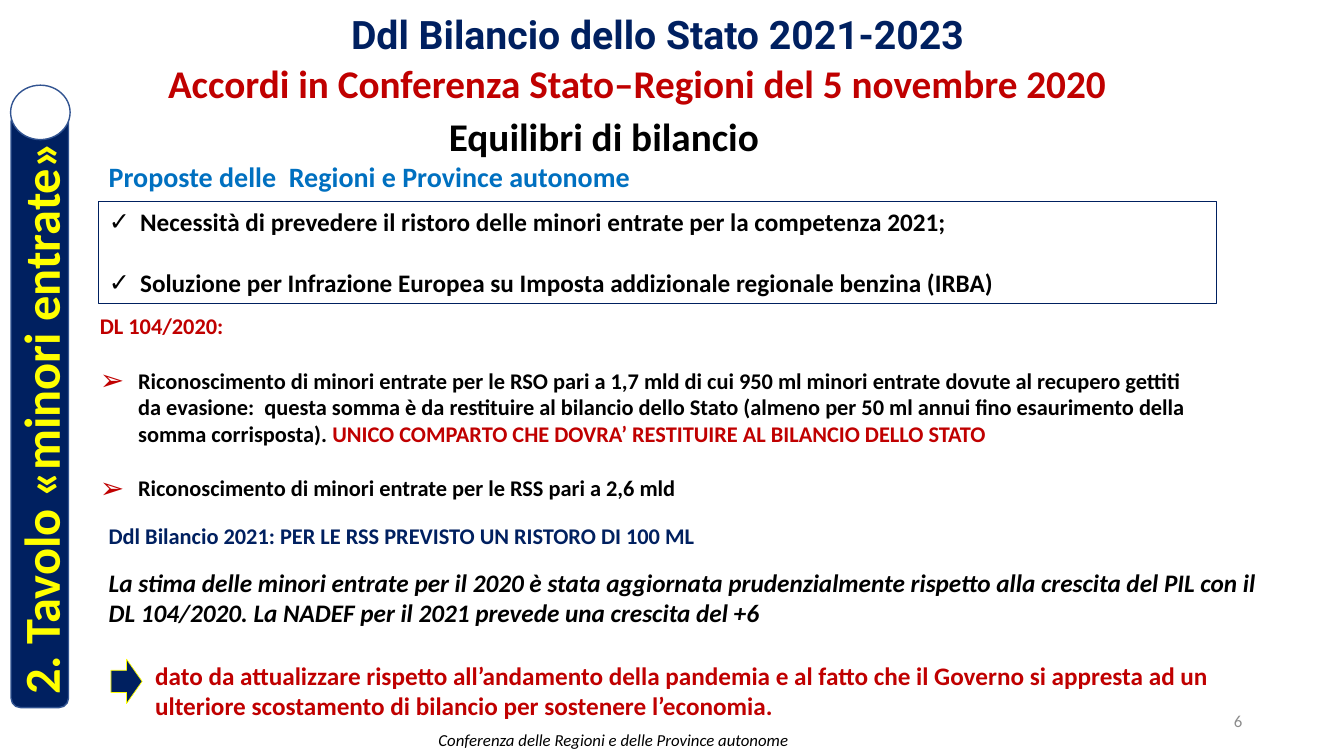
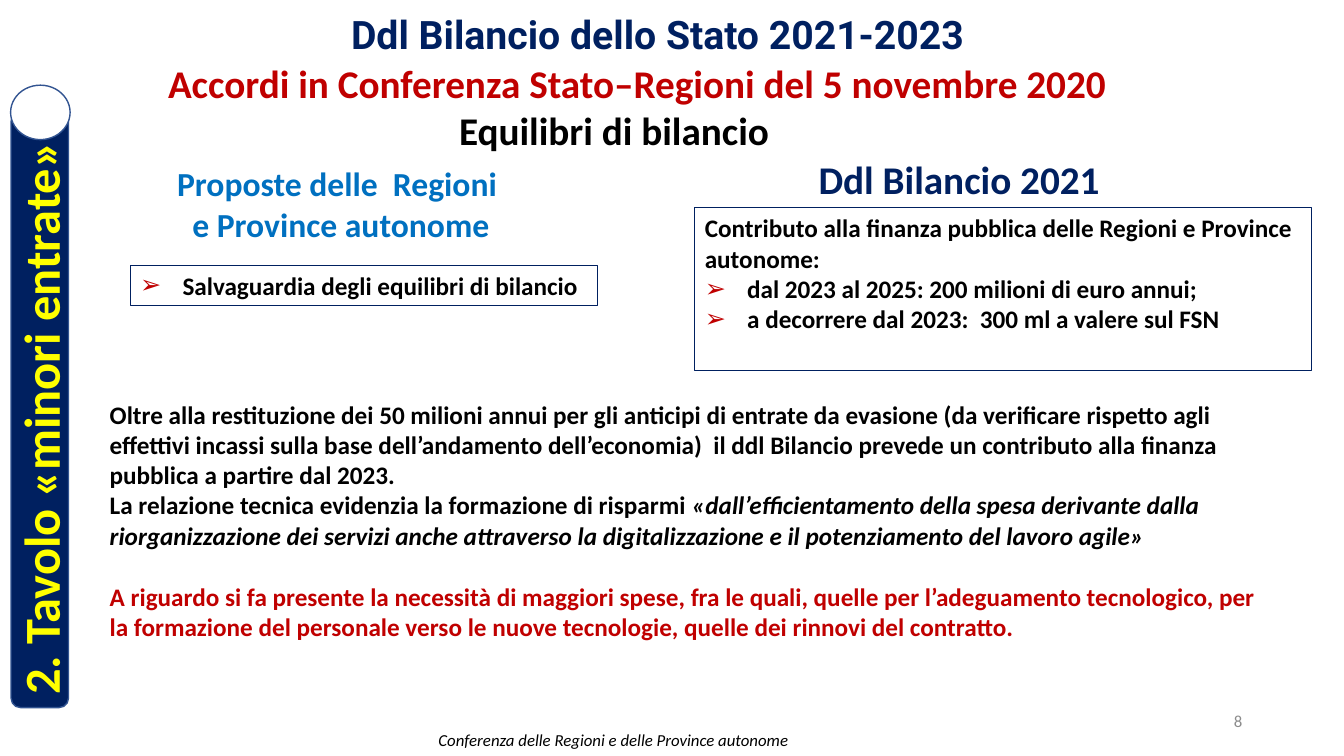
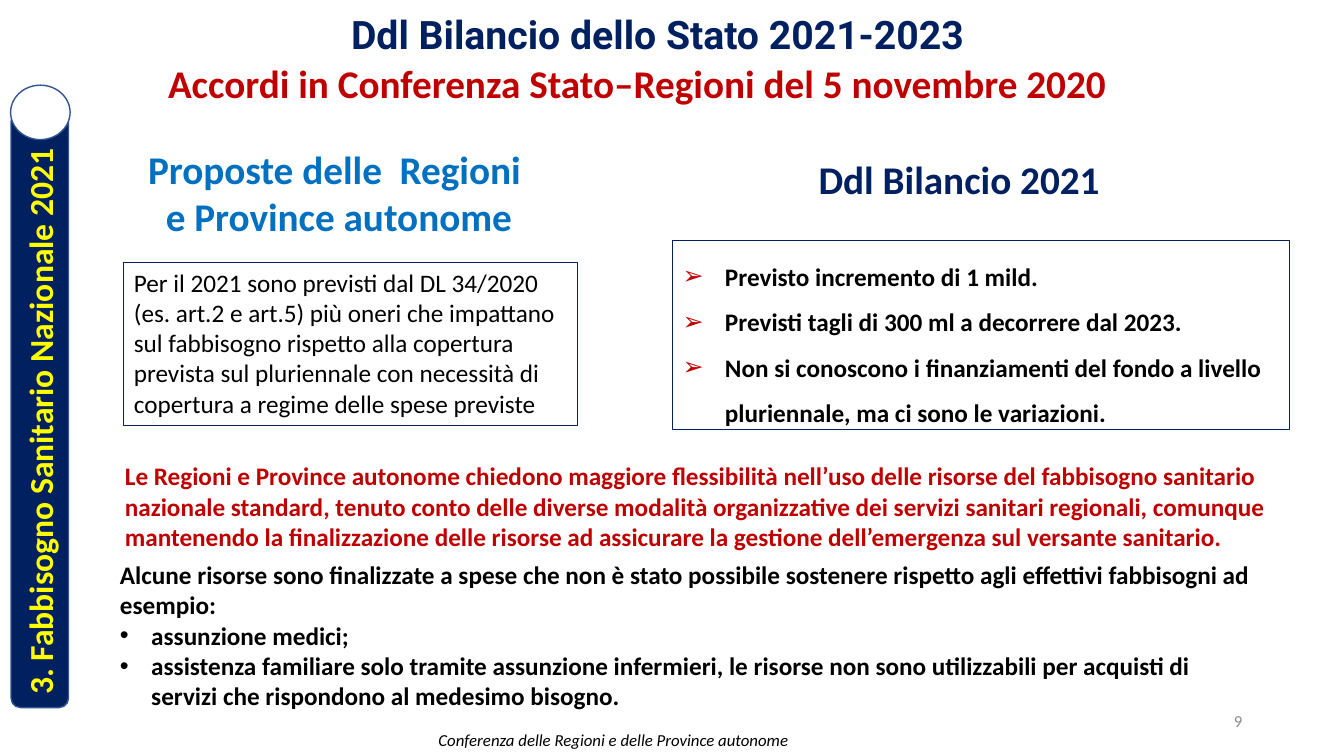
from dataclasses import dataclass

from lxml import etree
from pptx import Presentation
from pptx.dml.color import RGBColor
from pptx.enum.shapes import MSO_SHAPE
from pptx.enum.text import MSO_ANCHOR, MSO_AUTO_SIZE, PP_ALIGN
from pptx.oxml.ns import qn
from pptx.util import Emu, Pt

LEFT, CENTER, RIGHT = PP_ALIGN.LEFT, PP_ALIGN.CENTER, PP_ALIGN.RIGHT
TOP, MIDDLE = MSO_ANCHOR.TOP, MSO_ANCHOR.MIDDLE
NO_FIT = MSO_AUTO_SIZE.NONE
RECTANGLE, ROUNDED = MSO_SHAPE.RECTANGLE, MSO_SHAPE.ROUNDED_RECTANGLE
DISC, ARROW = MSO_SHAPE.FLOWCHART_CONNECTOR, MSO_SHAPE.RIGHT_ARROW

EMU_PER_PX = 9144
SLIDE_SIZE = (1333, 750)
TWO_CONTENT_LAYOUT = 3
LINE_HEIGHT = 1.22
COLORS = {
    "navy": "002060",
    "red": "C00000",
    "blue": "0070C0",
    "black": "000000",
    "white": "FFFFFF",
    "yellow": "FFFF00",
    "outline": "325491",
    "gray": "8C8C8C",
}


@dataclass
class Span:
    """A stretch of text in one style."""

    text: str
    color: str = "black"
    bold: bool = True
    italic: bool = False


@dataclass
class Para:
    """A paragraph; gap counts empty lines before it, indent is in px."""

    spans: list
    bullet: str = ""
    indent: int = 0
    bullet_color: str = ""
    bullet_percent: int = 100
    gap: int = 0
    spacing: float = 1.0


def px(length):
    """Turn px into EMU."""
    return Emu(length * EMU_PER_PX)


def rgb(name):
    """Look up a colour by name."""
    return RGBColor.from_string(COLORS[name])


def plain(text, color="black", **style):
    """Make a paragraph of one span."""
    return Para([Span(text, color, **style)])


def check(text, gap=0):
    """Make a paragraph with a check mark."""
    return Para([Span(text)], "✓", 31, gap=gap)


def dot(text):
    """Make a paragraph with a round bullet."""
    return Para([Span(text)], "•", 31)


def arrow(*spans, indent=42, percent=100, gap=0, spacing=1.0):
    """Make a paragraph with a red arrowhead bullet."""
    return Para(list(spans), "➢", indent, "red", percent, gap, spacing)


def set_bullet(para, item):
    """Write the indent and bullet of a paragraph."""
    properties = para._p.get_or_add_pPr()
    properties.set("marL", str(px(item.indent)))
    properties.set("indent", str(-px(item.indent)))
    if not item.bullet:
        etree.SubElement(properties, qn("a:buNone"))
        return
    if item.bullet_color:
        holder = etree.SubElement(properties, qn("a:buClr"))
        etree.SubElement(holder, qn("a:srgbClr"), val=COLORS[item.bullet_color])
    etree.SubElement(properties, qn("a:buSzPct"), val=str(item.bullet_percent * 1000))
    etree.SubElement(properties, qn("a:buChar"), char=item.bullet)


def write_text(box, items, size, align=LEFT, anchor=TOP, font="Calibri"):
    """Fill a box with paragraphs, run by run."""
    frame = box.text_frame
    frame.word_wrap = True
    frame.auto_size = NO_FIT
    frame.vertical_anchor = anchor
    for index, item in enumerate(items):
        para = frame.add_paragraph() if index else frame.paragraphs[0]
        set_bullet(para, item)
        para.alignment = align
        para.line_spacing = item.spacing
        para.space_before = Pt(round(item.gap * size * LINE_HEIGHT, 1))
        for span in item.spans:
            run = para.add_run()
            run.text = span.text
            run.font.name = font
            run.font.size = Pt(size)
            run.font.bold = span.bold
            run.font.italic = span.italic
            run.font.color.rgb = rgb(span.color)


def place(box, at):
    """Move and size a placeholder."""
    box.left, box.top, box.width, box.height = map(px, at)


def set_line(box, color, width):
    """Outline a shape."""
    box.line.color.rgb = rgb(color)
    box.line.width = Pt(width)


def add_text(page, at, items, size, **layout):
    """Add a text box."""
    box = page.shapes.add_textbox(*map(px, at))
    write_text(box, items, size, **layout)


def add_shape(page, kind, at, fill, line="", width=1.0, rotation=0):
    """Add a filled preset shape."""
    shape = page.shapes.add_shape(kind, *map(px, at))
    shape.shadow.inherit = False
    shape.rotation = rotation
    shape.fill.solid()
    shape.fill.fore_color.rgb = rgb(fill)
    if line:
        set_line(shape, line, width)
    else:
        shape.line.fill.background()
    return shape


def add_framed_text(page, at, items, size):
    """Add a thinly framed box without fill."""
    box = page.shapes.add_textbox(*map(px, at))
    set_line(box, "navy", 0.75)
    write_text(box, items, size)


def fill_list(page, index, at, items, size, framed=True):
    """Put a list in a body placeholder."""
    body = page.placeholders[index]
    place(body, at)
    if framed:
        set_line(body, "navy", 0.75)
    write_text(body, items, size)


def add_page(deck, number, section, section_size):
    """Add a slide with the shared titles, side band, footer and number."""
    page = deck.slides.add_slide(deck.slide_layouts[TWO_CONTENT_LAYOUT])
    footer = add_shape(page, RECTANGLE, (348, 723, 521, 22), "white")
    credit = plain("Conferenza delle Regioni e delle Province autonome", bold=False, italic=True)
    write_text(footer, [credit], 12, align=CENTER, anchor=MIDDLE)
    title = page.shapes.title
    place(title, (202, 5, 900, 52))
    write_text(title, [plain("Ddl Bilancio dello Stato 2021-2023", "navy")], 28,
               align=CENTER, font="Roboto")
    subtitle = plain("Accordi in Conferenza Stato–Regioni del 5 novembre 2020", "red")
    add_text(page, (129, 54, 1005, 57), [subtitle], 28, align=CENTER)
    band = add_shape(page, ROUNDED, (-256, 378, 591, 57), "navy", "outline", rotation=270)
    write_text(band, [plain(section, "yellow")], section_size, anchor=MIDDLE)
    add_shape(page, DISC, (13, 82, 54, 59), "white", "outline", rotation=270)
    add_text(page, (942, 695, 300, 40), [plain(str(number), "gray", bold=False)], 12,
             align=RIGHT, anchor=MIDDLE)
    return page


def add_topic(page, left, top):
    """Add the topic line below the titles."""
    add_text(page, (left, top, 666, 57), [plain("Equilibri di bilancio")], 28, align=CENTER)


def add_column_heads(page, at, size):
    """Add the headings of the proposals and the bill."""
    proposals = [plain("Proposte delle  Regioni ", "blue"), plain("e Province autonome", "blue")]
    add_text(page, at, proposals, size, align=CENTER)
    add_text(page, (802, 149, 415, 57), [plain("Ddl Bilancio 2021", "navy")], 28)


def build_revenue(deck):
    """Build the slide on lower revenue."""
    page = add_page(deck, 6, "2. Tavolo «minori entrate»", 36)
    add_topic(page, 266, 107)
    add_text(page, (98, 153, 610, 44),
             [plain("Proposte delle  Regioni e Province autonome", "blue")], 20)
    fill_list(page, 1, (98, 200, 1109, 101), [
        check("Necessità di prevedere il ristoro delle minori entrate per la competenza 2021;"),
        check("Soluzione per Infrazione Europea su Imposta addizionale regionale benzina (IRBA)",
              gap=1),
    ], 18)
    fill_list(page, 2, (89, 305, 1117, 199), [
        plain("DL 104/2020:", "red"),
        arrow(
            Span("Riconoscimento di minori entrate per le RSO pari a 1,7 mld di cui 950 ml "
                 "minori entrate dovute al recupero gettiti da evasione:  questa somma è da "
                 "restituire al bilancio dello Stato (almeno per 50 ml annui fino esaurimento "
                 "della somma corrisposta). "),
            Span("UNICO COMPARTO CHE DOVRA’ RESTITUIRE AL BILANCIO DELLO STATO", "red"),
            indent=38, percent=130, gap=1),
        arrow(Span("Riconoscimento di minori entrate per le RSS pari a 2,6 mld"),
              indent=38, percent=130, gap=1),
    ], 16, framed=False)
    add_text(page, (98, 513, 1027, 37),
             [plain("Ddl Bilancio 2021: PER LE RSS PREVISTO UN RISTORO DI 100 ML", "navy")], 16)
    add_text(page, (98, 558, 1163, 71), [plain(
        "La stima delle minori entrate per il 2020 è stata aggiornata prudenzialmente rispetto "
        "alla crescita del PIL con il DL 104/2020. La NADEF per il 2021 prevede una crescita "
        "del +6", italic=True)], 18)
    add_text(page, (144, 650, 1136, 71), [plain(
        "dato da attualizzare rispetto all’andamento della pandemia e al fatto che il Governo "
        "si appresta ad un ulteriore scostamento di bilancio per sostenere l’economia.",
        "red")], 18)
    add_shape(page, ARROW, (110, 654, 31, 44), "navy", "yellow", 0.5)


def build_balance(deck):
    """Build the slide on the balanced budget."""
    page = add_page(deck, 8, "2. Tavolo «minori entrate»", 36)
    add_topic(page, 276, 101)
    add_column_heads(page, (32, 157, 612, 91), 24)
    fill_list(page, 1, (129, 263, 464, 40),
              [arrow(Span("Salvaguardia degli equilibri di bilancio"))], 18)
    fill_list(page, 2, (689, 206, 612, 162), [
        plain("Contributo alla finanza pubblica delle Regioni e Province autonome:"),
        arrow(Span("dal 2023 al 2025: 200 milioni di euro annui;")),
        arrow(Span("a decorrere dal 2023:  300 ml a valere sul FSN")),
    ], 18)
    add_text(page, (99, 391, 1174, 252), [
        plain("Oltre alla restituzione dei 50 milioni annui per gli anticipi di entrate da "
              "evasione (da verificare rispetto agli effettivi incassi sulla base "
              "dell’andamento dell’economia)  il ddl Bilancio prevede un contributo alla "
              "finanza pubblica a partire dal 2023."),
        Para([
            Span("La relazione tecnica evidenzia la formazione di risparmi "),
            Span("«dall’efficientamento della spesa derivante dalla riorganizzazione dei "
                 "servizi anche attraverso la digitalizzazione e il potenziamento del lavoro "
                 "agile»", italic=True),
        ]),
        Para([Span(
            "A riguardo si fa presente la necessità di maggiori spese, fra le quali, quelle "
            "per l’adeguamento tecnologico, per la formazione del personale verso le nuove "
            "tecnologie, quelle dei rinnovi del contratto.", "red")], gap=1),
    ], 18)


def build_health(deck):
    """Build the slide on health funding."""
    page = add_page(deck, 9, "3. Fabbisogno Sanitario Nazionale 2021", 24)
    add_column_heads(page, (30, 139, 612, 104), 28)
    add_framed_text(page, (123, 260, 450, 162), [plain(
        "Per il 2021 sono previsti dal DL 34/2020 (es. art.2 e art.5) più oneri che impattano "
        "sul fabbisogno rispetto alla copertura prevista sul pluriennale con necessità di "
        "copertura a regime delle spese previste", bold=False)], 18)
    fill_list(page, 1, (667, 239, 612, 187), [
        arrow(Span(text), spacing=1.5) for text in (
            "Previsto incremento di 1 mild.",
            "Previsti tagli di 300 ml a decorrere dal 2023.",
            "Non si conoscono i finanziamenti del fondo a livello pluriennale, ma ci sono le "
            "variazioni.",
        )
    ], 18)
    add_text(page, (114, 452, 1181, 101), [plain(
        "Le Regioni e Province autonome chiedono maggiore flessibilità nell’uso delle risorse "
        "del fabbisogno sanitario nazionale standard, tenuto conto delle diverse modalità "
        "organizzative dei servizi sanitari regionali, comunque mantenendo la finalizzazione "
        "delle risorse ad assicurare la gestione dell’emergenza sul versante sanitario.",
        "red")], 18)
    fill_list(page, 2, (109, 550, 1145, 162), [
        plain("Alcune risorse sono finalizzate a spese che non è stato possibile sostenere "
              "rispetto agli effettivi fabbisogni ad esempio:"),
        dot("assunzione medici;"),
        dot("assistenza familiare solo tramite assunzione infermieri, le risorse non sono "
            "utilizzabili per acquisti di servizi che rispondono al medesimo bisogno."),
    ], 18, framed=False)


def main():
    """Build and save the deck."""
    deck = Presentation()
    deck.slide_width, deck.slide_height = map(px, SLIDE_SIZE)
    build_revenue(deck)
    build_balance(deck)
    build_health(deck)
    deck.save("out.pptx")


if __name__ == "__main__":
    main()
